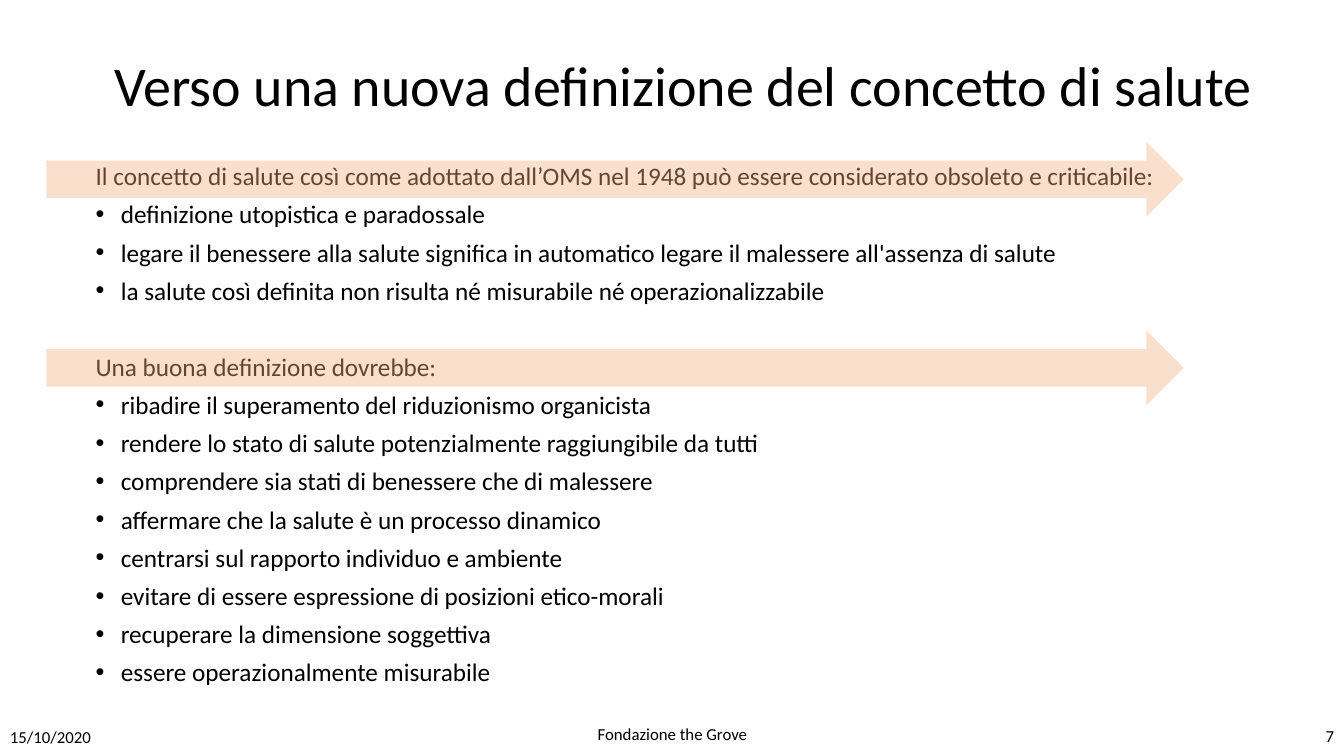
from lxml import etree
from pptx import Presentation
from pptx.dml.color import RGBColor
from pptx.enum.shapes import MSO_SHAPE
from pptx.enum.text import MSO_ANCHOR, PP_ALIGN
from pptx.oxml.ns import qn
from pptx.util import Inches, Pt

SECTIONS = [
    ("Il concetto di salute così come adottato dall’OMS nel 1948 può essere considerato obsoleto e criticabile:", [
        "definizione utopistica e paradossale",
        "legare il benessere alla salute significa in automatico legare il malessere all'assenza di salute",
        "la salute così definita non risulta né misurabile né operazionalizzabile",
    ]),
    ("Una buona definizione dovrebbe:", [
        "ribadire il superamento del riduzionismo organicista",
        "rendere lo stato di salute potenzialmente raggiungibile da tutti",
        "comprendere sia stati di benessere che di malessere",
        "affermare che la salute è un processo dinamico",
        "centrarsi sul rapporto individuo e ambiente",
        "evitare di essere espressione di posizioni etico-morali",
        "recuperare la dimensione soggettiva",
        "essere operazionalmente misurabile",
    ]),
]
FOOTERS = [
    ("15/10/2020", 0, 7.11, 3, PP_ALIGN.LEFT),
    ("Fondazione the Grove", 4.42, 7.08, 4.5, PP_ALIGN.CENTER),
    ("7", 10.33, 7.1, 3, PP_ALIGN.RIGHT),
]


def color(hex_value):
    return RGBColor.from_string(hex_value)


def style_font(paragraph, size):
    for run in paragraph.runs:
        run.font.name = "Calibri"
        run.font.size = Pt(size)
        run.font.color.rgb = color("000000")


presentation = Presentation()
presentation.slide_width = Inches(13.33)
presentation.slide_height = Inches(7.5)
slide = presentation.slides.add_slide(presentation.slide_layouts[5])

title = slide.shapes.title
title.left, title.top = Inches(0.53), Inches(0.15)
title.width, title.height = Inches(12.49), Inches(1.45)
title.text_frame.text = "Verso una nuova definizione del concetto di salute"
title.text_frame.vertical_anchor = MSO_ANCHOR.MIDDLE
heading = title.text_frame.paragraphs[0]
heading.alignment = PP_ALIGN.CENTER
heading.line_spacing = 0.9
style_font(heading, 40)

# Section leads and their bulleted points
body = slide.shapes.add_textbox(Inches(0.85), Inches(1.6), Inches(11.5), Inches(5.59)).text_frame
body.word_wrap = True
body.text = "\n".join(line for lead, points in SECTIONS for line in [lead, *points])
leads = [lead for lead, points in SECTIONS]
for paragraph in body.paragraphs:
    paragraph.line_spacing = 0.8
    paragraph.space_before = Pt(10)
    style_font(paragraph, 18)
    if paragraph.text == leads[1]:
        paragraph.space_before = Pt(37)
    if paragraph.text not in leads:
        properties = paragraph._p.get_or_add_pPr()
        properties.set("marL", str(Inches(0.25)))
        properties.set("indent", str(Inches(-0.25)))
        etree.SubElement(properties, qn("a:buFont"), typeface="Arial")
        etree.SubElement(properties, qn("a:buChar"), char="•")

for wording, left, top, width, alignment in FOOTERS:
    footer = slide.shapes.add_textbox(Inches(left), Inches(top), Inches(width), Inches(0.4)).text_frame
    footer.word_wrap = True
    footer.vertical_anchor = MSO_ANCHOR.MIDDLE
    footer.text = wording
    footer.paragraphs[0].alignment = alignment
    footer.paragraphs[0].space_after = Pt(6)
    style_font(footer.paragraphs[0], 12)

# Translucent arrows laid over the two section leads
for top in (3.28, 1.41):
    arrow = slide.shapes.add_shape(
        MSO_SHAPE.RIGHT_ARROW, Inches(0.46), Inches(top), Inches(11.28), Inches(0.74))
    arrow.shadow.inherit = False
    arrow.line.fill.background()
    arrow.fill.solid()
    arrow.fill.fore_color.rgb = color("F4B183")
    tint = arrow._element.spPr.find(qn("a:solidFill")).find(qn("a:srgbClr"))
    etree.SubElement(tint, qn("a:alpha"), val="40000")

presentation.save("out.pptx")
